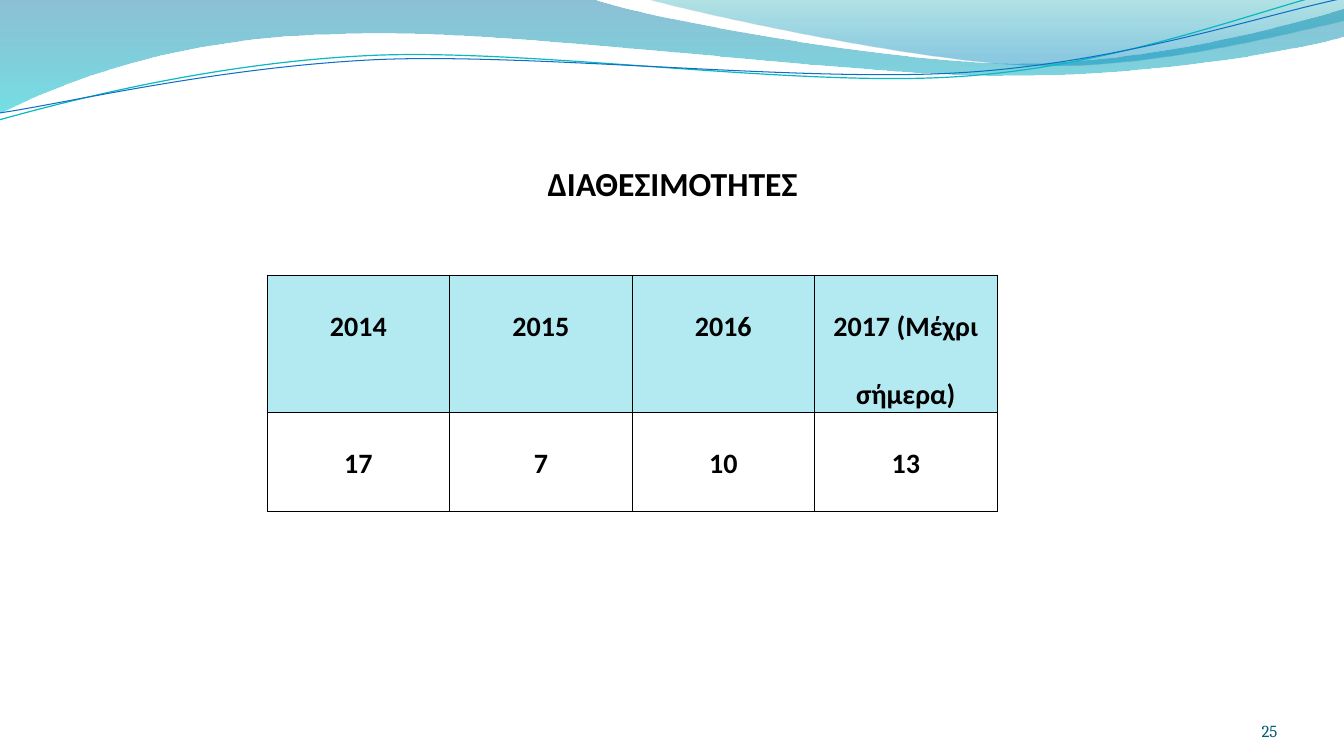
import dataclasses
import math

import lxml.etree
import pptx
import pptx.dml.color
import pptx.enum.text
import pptx.oxml.ns
import pptx.shapes.autoshape
import pptx.slide
import pptx.table
import pptx.text.text
import pptx.util

Inches = pptx.util.Inches
qn = pptx.oxml.ns.qn
Point = tuple[float, float]
Segment = tuple[Point, ...]

HEADER_FILL = "B3EAF2"
BLACK = "000000"
WAVE_TILT = 357.3
CENTER = pptx.enum.text.PP_ALIGN.CENTER
RIGHT = pptx.enum.text.PP_ALIGN.RIGHT


@dataclasses.dataclass
class GradientStop:
    position: float
    color: str
    opacity: int


@dataclasses.dataclass
class Ribbon:
    """Closed outline; a segment holds one point (line) or three (Bézier curve)."""
    start: Point
    segments: list[Segment]
    stops: list[GradientStop]


@dataclasses.dataclass
class Wave:
    """Open curve, given as it lies on the slide after tilting about its center."""
    start: Point
    segments: list[Segment]
    center: Point
    color: str
    width: float


RIBBONS = [
    Ribbon((0, 0), [
        ((5.87, -0.01),),
        ((6.34, 0.17), (8.85, 0.63), (10.11, 0.63)),
        ((11.38, 0.63), (12.78, 0.26), (13.33, 0.09)),
        ((13.35, 0.36),),
        ((13.11, 0.44), (11.6, 0.76), (9.94, 0.75)),
        ((8.29, 0.75), (5.09, 0.28), (3.43, 0.34)),
        ((1.72, 0.36), (0.61, 0.83), (-0.01, 1.13)),
        ((0, 0),),
    ], [GradientStop(0, "0074A1", 45), GradientStop(1, "00C6CF", 55)]),
    Ribbon((6.39, -0.01), [
        ((6.79, 0.11), (9.09, 0.62), (10.25, 0.65)),
        ((11.41, 0.69), (12.82, 0.32), (13.33, 0.21)),
        ((13.33, 0),),
        ((6.39, -0.01),),
    ], [GradientStop(0, "00A1A9", 30), GradientStop(0.8, "008BBF", 45)]),
]

WAVES = [
    Wave((-0.01, 1.19), [
        ((0.64, 1.01), (2.11, 0.62), (3.69, 0.55)),
        ((5.27, 0.48), (7.9, 0.87), (9.5, 0.76)),
        ((11.1, 0.66), (12.52, 0.08), (13.31, -0.1)),
    ], (6.65, 0.58), "0AB8BF", 0.85),
    Wave((0, 1.12), [
        ((0.63, 1.03), (2.18, 0.66), (3.78, 0.59)),
        ((5.37, 0.53), (7.96, 0.82), (9.55, 0.72)),
        ((11.15, 0.62), (12.55, 0.14), (13.34, -0.02)),
    ], (6.67, 0.59), "0F6FC6", 0.75),
]

AVAILABILITY = [
    ["2014", "2015", "2016", "2017 (Μέχρι σήμερα)"],
    ["17", "7", "10", "13"],
]


def rgb(color: str) -> pptx.dml.color.RGBColor:
    return pptx.dml.color.RGBColor.from_string(color)


def untilt(point: Point, center: Point) -> Point:
    """Turn a point back to where it lies before the shape is rotated."""
    angle = math.radians(-WAVE_TILT)
    x, y = point[0] - center[0], point[1] - center[1]
    return (center[0] + x * math.cos(angle) - y * math.sin(angle),
            center[1] + x * math.sin(angle) + y * math.cos(angle))


def add_outline(slide: pptx.slide.Slide, start: Point, segments: list[Segment],
                closed: bool) -> pptx.shapes.autoshape.Shape:
    """Lay the points as a polyline, then join each three-point segment into a curve."""
    points = [start, *(point for segment in segments for point in segment)]
    vertices = [(Inches(x), Inches(y)) for x, y in points]
    builder = slide.shapes.build_freeform(*vertices[0])
    builder.add_line_segments(vertices[1:], close=closed)
    shape = builder.convert_to_shape()
    shape.shadow.inherit = False

    lines = iter(list(shape._element.spPr.iter(qn("a:lnTo"))))
    for segment in segments:
        first, *others = [next(lines) for _ in segment]
        if others:
            curve = lxml.etree.Element(qn("a:cubicBezTo"))
            first.addprevious(curve)
            for line in (first, *others):
                curve.append(line[0])
                line.getparent().remove(line)
    return shape


def add_ribbon(slide: pptx.slide.Slide, ribbon: Ribbon) -> None:
    shape = add_outline(slide, ribbon.start, ribbon.segments, closed=True)
    shape.line.fill.background()
    shape.fill.gradient()
    shape.fill.gradient_angle = 270
    for gradient_stop, stop in zip(shape.fill.gradient_stops, ribbon.stops):
        gradient_stop.position = stop.position
        gradient_stop.color.rgb = rgb(stop.color)
    colors = shape._element.spPr.find(qn("a:gradFill")).iter(qn("a:srgbClr"))
    for color, stop in zip(colors, ribbon.stops):
        lxml.etree.SubElement(color, qn("a:alpha"), val=str(stop.opacity * 1000))


def add_wave(slide: pptx.slide.Slide, wave: Wave) -> None:
    segments = [tuple(untilt(point, wave.center) for point in segment)
                for segment in wave.segments]
    shape = add_outline(slide, untilt(wave.start, wave.center), segments, closed=False)
    shape.rotation = WAVE_TILT
    shape.fill.background()
    shape.line.color.rgb = rgb(wave.color)
    shape.line.width = pptx.util.Pt(wave.width)


def write_text(text_frame: pptx.text.text.TextFrame, text: str, size: float,
               font: str = "Calibri", color: str = BLACK, bold: bool = True,
               alignment: pptx.enum.text.PP_ALIGN = CENTER) -> None:
    text_frame.text = text
    paragraph = text_frame.paragraphs[0]
    paragraph.alignment = alignment
    run_font = paragraph.runs[0].font
    run_font.name = font
    run_font.size = pptx.util.Pt(size)
    run_font.bold = bold
    run_font.color.rgb = rgb(color)


def anchor_bottom(text_frame: pptx.text.text.TextFrame, top_margin: float = 0) -> None:
    text_frame.word_wrap = True
    text_frame.vertical_anchor = pptx.enum.text.MSO_ANCHOR.BOTTOM
    text_frame.margin_left = text_frame.margin_right = text_frame.margin_bottom = 0
    text_frame.margin_top = Inches(top_margin)


def add_borders(cell: pptx.table._Cell) -> None:
    properties = cell._tc.get_or_add_tcPr()
    for side in ("lnL", "lnR", "lnT", "lnB"):
        line = lxml.etree.SubElement(properties, qn(f"a:{side}"), w=str(pptx.util.Pt(1)))
        fill = lxml.etree.SubElement(line, qn("a:solidFill"))
        lxml.etree.SubElement(fill, qn("a:srgbClr"), val=BLACK)


def add_availability_table(slide: pptx.slide.Slide) -> None:
    frame = slide.shapes.add_table(len(AVAILABILITY), len(AVAILABILITY[0]), Inches(2.65),
                                   Inches(2.73), Inches(7.24), Inches(1.96))
    frame.height = Inches(2.32)
    table = frame.table
    table.first_row = table.horz_banding = False
    for row_index, values in enumerate(AVAILABILITY):
        for column_index, value in enumerate(values):
            cell = table.cell(row_index, column_index)
            add_borders(cell)
            if row_index == 0:
                cell.fill.solid()
                cell.fill.fore_color.rgb = rgb(HEADER_FILL)
            else:
                cell.fill.background()
            cell.margin_left = cell.margin_right = Inches(0.07)
            cell.margin_top = cell.margin_bottom = 0
            write_text(cell.text_frame, value, 20)
            cell.text_frame.paragraphs[0].line_spacing = 2.0


def main() -> None:
    presentation = pptx.Presentation()
    presentation.slide_width, presentation.slide_height = Inches(13.33), Inches(7.5)
    slide = presentation.slides.add_slide(presentation.slide_layouts.get_by_name("Title Only"))
    for ribbon in RIBBONS:
        add_ribbon(slide, ribbon)
    for wave in WAVES:
        add_wave(slide, wave)

    title = slide.shapes.title
    title.left, title.top, title.width, title.height = map(Inches, (0.67, 0.77, 12, 1.25))
    write_text(title.text_frame, "ΔΙΑΘΕΣΙΜΟΤΗΤΕΣ", 24)
    anchor_bottom(title.text_frame, top_margin=0.05)
    add_availability_table(slide)
    page_number = slide.shapes.add_textbox(*map(Inches, (11.56, 6.95, 1.11, 0.4)))
    write_text(page_number.text_frame, "25", 12, "Cambria", "045D75", False, RIGHT)
    anchor_bottom(page_number.text_frame)
    presentation.save("out.pptx")


if __name__ == "__main__":
    main()
